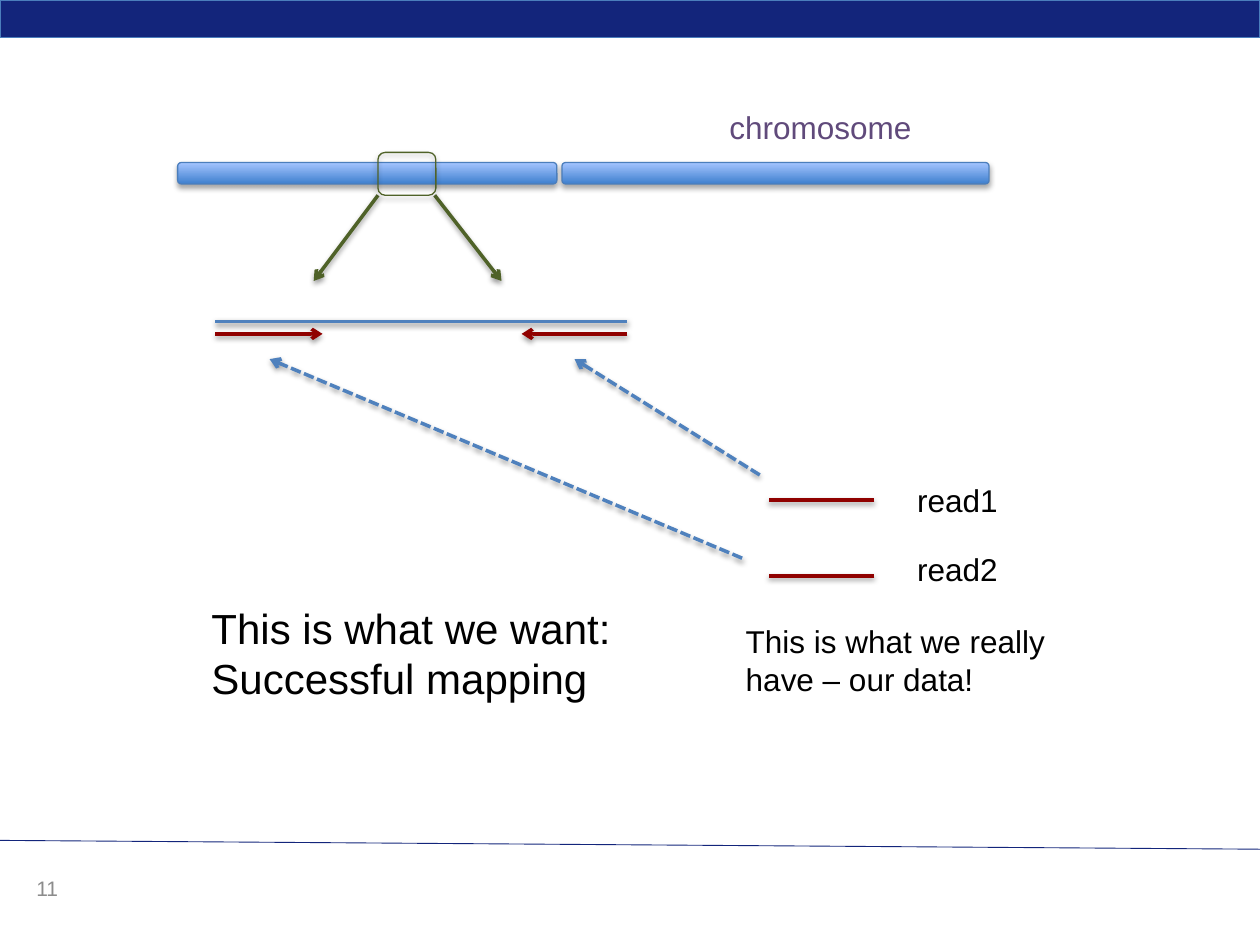
import dataclasses

import lxml.etree
import pptx
import pptx.dml.color
import pptx.enum.dml
import pptx.enum.shapes
import pptx.enum.text
import pptx.oxml.ns
import pptx.util

Inches, Pt = pptx.util.Inches, pptx.util.Pt
SHAPES = pptx.enum.shapes.MSO_SHAPE


@dataclasses.dataclass(frozen=True)
class Theme:
    font: str = "Arial"
    navy: str = "13257B"
    edge: str = "4B7EBC"
    bar_dark: str = "3F80CE"
    bar_light: str = "A4C4FF"
    blue: str = "4F81BD"
    red: str = "900100"
    green: str = "4F6228"
    purple: str = "604A7B"
    black: str = "000000"
    gray: str = "8C8C8C"
    large: int = 24
    body: int = 18
    small: int = 12
    thin: float = 0.5
    outline: float = 0.75
    stroke: float = 2


def rgb(value):
    return pptx.dml.color.RGBColor.from_string(value)


def sub(parent, tag, **attributes):
    return lxml.etree.SubElement(parent, pptx.oxml.ns.qn(tag), attributes)


class SlideBuilder:
    def __init__(self, slide, theme):
        self.slide, self.theme = slide, theme

    def add_shadow(self, effects, opacity, distance):
        shadow = sub(effects, "a:outerShdw", blurRad=str(Pt(3.1)), dist=str(Pt(distance)),
                     dir="5400000", rotWithShape="0")
        color = sub(shadow, "a:srgbClr", val=self.theme.black)
        sub(color, "a:alpha", val=str(opacity * 1000))

    def block(self, kind, box, edge, fill=None, gradient=None, shadow=False):
        block = self.slide.shapes.add_shape(kind, *map(Inches, box))
        if gradient:
            block.fill.gradient()
            block.fill.gradient_angle = 90
            for stop, color in zip(block.fill.gradient_stops, gradient):
                stop.color.rgb = rgb(color)
        elif fill:
            block.fill.solid()
            block.fill.fore_color.rgb = rgb(fill)
        else:
            block.fill.background()
        block.line.color.rgb = rgb(edge)
        block.line.width = Pt(self.theme.outline)
        block.shadow.inherit = False
        if shadow:
            effects = block.element.spPr.find(pptx.oxml.ns.qn("a:effectLst"))
            self.add_shadow(effects, 35, 1.8)

    def line(self, start, end, color, width=None, arrow=False, dashed=False, shadow=True):
        line = self.slide.shapes.add_connector(
            pptx.enum.shapes.MSO_CONNECTOR.STRAIGHT, *map(Inches, (*start, *end)))
        line.line.color.rgb = rgb(color)
        line.line.width = Pt(width or self.theme.stroke)
        if dashed:
            line.line.dash_style = pptx.enum.dml.MSO_LINE.SQUARE_DOT
        if arrow:
            sub(line.line._get_or_add_ln(), "a:tailEnd", type="arrow")
        effects = sub(line._element.spPr, "a:effectLst")
        if shadow:
            self.add_shadow(effects, 38, 1.6)

    def text(self, box, paragraphs, size, color, wrap=False):
        frame = self.slide.shapes.add_textbox(*map(Inches, box)).text_frame
        frame.word_wrap = wrap
        frame.auto_size = pptx.enum.text.MSO_AUTO_SIZE.NONE
        for index, wording in enumerate(paragraphs):
            paragraph = frame.paragraphs[0] if index == 0 else frame.add_paragraph()
            run = paragraph.add_run()
            run.text = wording
            run.font.name = self.theme.font
            run.font.size = Pt(size)
            run.font.color.rgb = rgb(color)


def main():
    deck = pptx.Presentation()
    deck.slide_width, deck.slide_height = Inches(10), Inches(7.5)
    theme = Theme()
    page = SlideBuilder(deck.slides.add_slide(deck.slide_layouts[6]), theme)

    # Header band and footer rule
    page.block(SHAPES.RECTANGLE, (0, 0, 10, 0.3), theme.edge, fill=theme.navy)
    page.line((10, 6.74), (0, 6.67), theme.navy, width=theme.thin, shadow=False)

    # Chromosome arms
    for left, width in ((4.46, 3.39), (1.41, 3.01)):
        page.block(SHAPES.ROUNDED_RECTANGLE, (left, 1.29, width, 0.17), theme.edge,
                   gradient=(theme.bar_dark, theme.bar_light), shadow=True)
    page.text((5.69, 0.81, 1.66, 0.4), ["chromosome"], theme.body, theme.purple)

    # Unmapped reads
    for name, line_y, label_y in (("read1", 3.97, 3.77), ("read2", 4.57, 4.32)):
        page.line((6.94, line_y), (6.1, line_y), theme.red)
        page.text((7.18, label_y, 0.85, 0.4), [name], theme.body, theme.black)

    # Zoom from the chromosome region
    for start_x, end_x in ((3, 2.49), (3.45, 3.98)):
        page.line((start_x, 1.55), (end_x, 2.23), theme.green, arrow=True)
    page.block(SHAPES.ROUNDED_RECTANGLE, (3, 1.21, 0.46, 0.34), theme.green, shadow=True)

    # Fragment with its read pair
    page.line((1.71, 2.55), (4.98, 2.55), theme.blue)
    for start_x, end_x in ((4.98, 4.14), (1.71, 2.56)):
        page.line((start_x, 2.65), (end_x, 2.65), theme.red, arrow=True)

    # Mapping of reads to the fragment
    for start, end_x in (((6.03, 3.77), 4.56), ((5.89, 4.43), 2.14)):
        page.line(start, (end_x, 2.85), theme.blue, arrow=True, dashed=True)

    # Captions and page number
    page.text((1.58, 4.73, 3.49, 0.91), ["This is what we want:", "Successful mapping"],
              theme.large, theme.black)
    page.text((5.82, 4.89, 2.72, 0.71), ["This is what we really have – our data!"],
              theme.body, theme.black, wrap=True)
    page.text((0.19, 6.9, 0.45, 0.4), ["11"], theme.small, theme.gray, wrap=True)

    deck.save("out.pptx")


if __name__ == "__main__":
    main()
